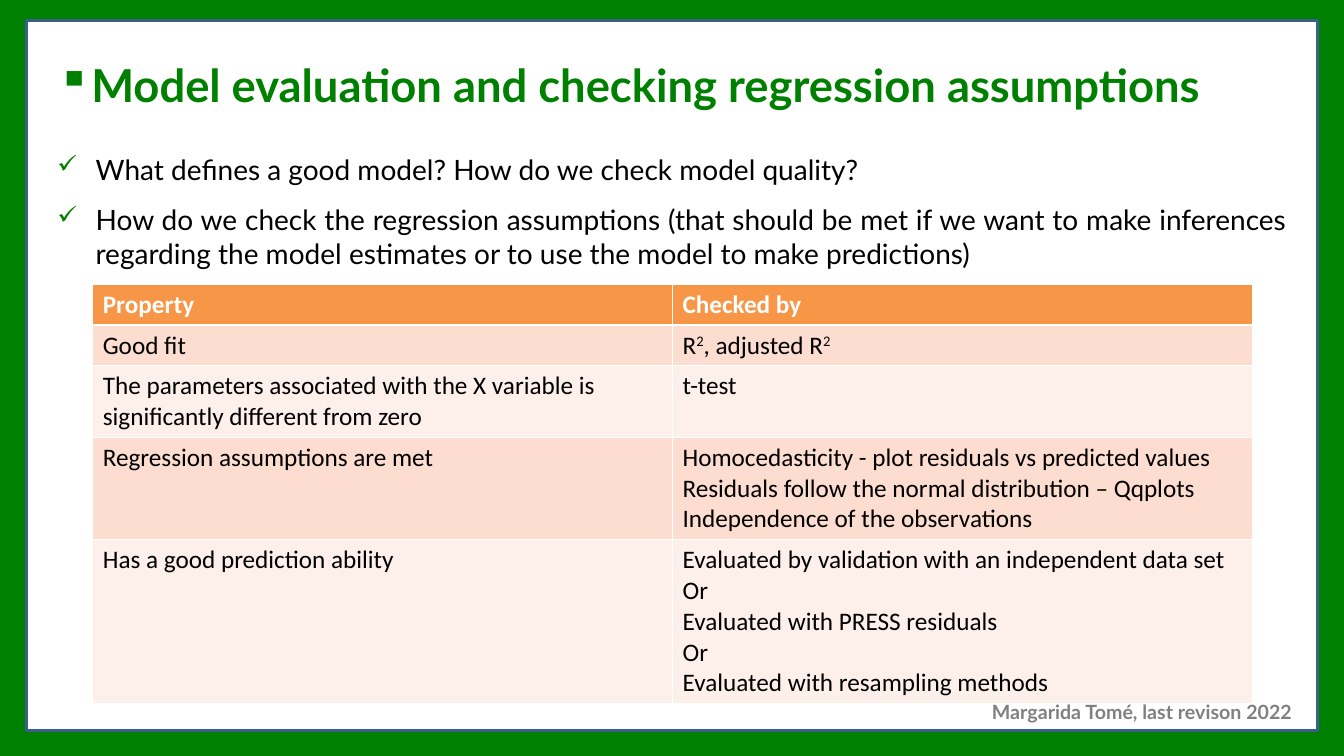
"""Build the slide on model evaluation and regression assumptions."""
from dataclasses import dataclass

from lxml import etree
from pptx import Presentation
from pptx import util as u
from pptx.dml.color import RGBColor
from pptx.enum import shapes, text
from pptx.oxml import ns

TITLE = "Model evaluation and checking regression assumptions"
QUESTIONS = [
    "What defines a good model? How do we check model quality?",
    "How do we check the regression assumptions (that should be met if we want to make "
    "inferences regarding the model estimates or to use the model to make predictions)",
]
CHECKS = [
    ("Property", ["Checked by"]),
    ("Good fit", ["R^2^, adjusted R^2"]),
    ("The parameters associated with the X variable is significantly different from zero",
     ["t-test"]),
    ("Regression assumptions are met", [
        "Homocedasticity - plot residuals vs predicted values",
        "Residuals follow the normal distribution – Qqplots",
        "Independence of the observations"]),
    ("Has a good prediction ability", [
        "Evaluated by validation with an independent data set", "Or",
        "Evaluated with PRESS residuals", "Or",
        "Evaluated with resampling methods"]),
]
LINES_PER_ROW = [1, 1, 2, 3, 5]
CREDIT = "Margarida Tomé, last revison 2022"


@dataclass(frozen=True)
class Theme:
    """Colours, fonts and type sizes."""
    green: str = "008000"
    white: str = "FFFFFF"
    black: str = "000000"
    edge: str = "3A5F8C"
    gray: str = "808080"
    header: str = "F79646"
    bands: tuple = ("FDEFE9", "FCDDCF")
    font: str = "Lato"
    table_font: str = "Calibri"
    title_size: float = 32.4
    body_size: int = 20
    table_size: int = 18
    credit_size: int = 14


THEME = Theme()
WIDTH, HEIGHT = 13.33, 7.5
LEFT, TEXT_WIDTH = 0.47, 12.39
LINE_HEIGHT, CELL_PADDING = 0.305, 0.1


def inches(*lengths):
    return [u.Inches(length) for length in lengths]


def style(para, size, color, font=THEME.font, bold=False):
    for span in para.runs:
        span.font.name, span.font.size, span.font.bold = font, u.Pt(size), bold
        span.font.color.rgb = RGBColor.from_string(color)


def add_bullet(para, mark, indent, percent=100):
    props = para._p.get_or_add_pPr()
    props.set("marL", str(u.Inches(indent)))
    props.set("indent", str(-u.Inches(indent)))
    color = etree.SubElement(props, ns.qn("a:buClr"))
    etree.SubElement(color, ns.qn("a:srgbClr"), val=THEME.green)
    etree.SubElement(props, ns.qn("a:buSzPct"), val=str(percent * 1000))
    etree.SubElement(props, ns.qn("a:buChar"), char=mark)


def add_panel(page, place, fill, line):
    panel = page.shapes.add_shape(shapes.MSO_SHAPE.RECTANGLE, *inches(*place))
    panel.shadow.inherit = False
    panel.fill.solid()
    panel.fill.fore_color.rgb = RGBColor.from_string(fill)
    panel.line.color.rgb = RGBColor.from_string(line)
    panel.line.width = u.Pt(2)


def add_text(page, place, lines):
    box = page.shapes.add_textbox(*inches(*place))
    box.text_frame.word_wrap = True
    box.text_frame.text = "\n".join(lines)
    return box.text_frame.paragraphs


def place_title(page):
    title = page.shapes.title
    page.shapes._spTree.append(title._element)
    title.left, title.top, title.width, title.height = inches(LEFT, 0.44, TEXT_WIDTH, 0.79)
    title.text_frame.text = TITLE
    title.text_frame.vertical_anchor = text.MSO_ANCHOR.MIDDLE
    para = title.text_frame.paragraphs[0]
    para.alignment = text.PP_ALIGN.LEFT
    add_bullet(para, "▪", 0.24)
    style(para, THEME.title_size, THEME.green, bold=True)


def fill_cell(cell, lines, row):
    cell.fill.solid()
    fill = THEME.bands[row % 2] if row else THEME.header
    cell.fill.fore_color.rgb = RGBColor.from_string(fill)
    cell.text_frame.text = "\n".join(line.split("^")[0] for line in lines)
    for para, line in zip(cell.text_frame.paragraphs, lines):
        for order, part in enumerate(line.split("^")[1:], 1):
            span = para.add_run()
            span.text = part
            if order % 2:
                span.font._element.set("baseline", "30000")
        style(para, THEME.table_size, THEME.black if row else THEME.white,
              THEME.table_font, bold=not row)


def add_checks(page):
    heights = [count * LINE_HEIGHT + CELL_PADDING for count in LINES_PER_ROW]
    table = page.shapes.add_table(
        len(CHECKS), 2, *inches(0.92, 2.82, 11.5, sum(heights))).table
    for row, (name, methods) in enumerate(CHECKS):
        table.rows[row].height = u.Inches(heights[row])
        fill_cell(table.cell(row, 0), [name], row)
        fill_cell(table.cell(row, 1), methods, row)


def main():
    deck = Presentation()
    deck.slide_width, deck.slide_height = inches(WIDTH, HEIGHT)
    page = deck.slides.add_slide(deck.slide_layouts.get_by_name("Title Only"))
    add_panel(page, (0, 0, WIDTH, HEIGHT), THEME.green, THEME.green)
    add_panel(page, (0.26, 0.2, 12.81, 7.05), THEME.white, THEME.edge)
    for para in add_text(page, (9.74, 6.89, 3.4, 0.34), [CREDIT]):
        style(para, THEME.credit_size, THEME.gray, bold=True)
    place_title(page)
    for para in add_text(page, (LEFT, 1.46, TEXT_WIDTH, 1.3), QUESTIONS):
        para.alignment = text.PP_ALIGN.JUSTIFY
        para.space_before = u.Pt(12)
        add_bullet(para, "✓", 0.38, 90)
        style(para, THEME.body_size, THEME.black)
    add_checks(page)
    deck.save("out.pptx")


if __name__ == "__main__":
    main()
